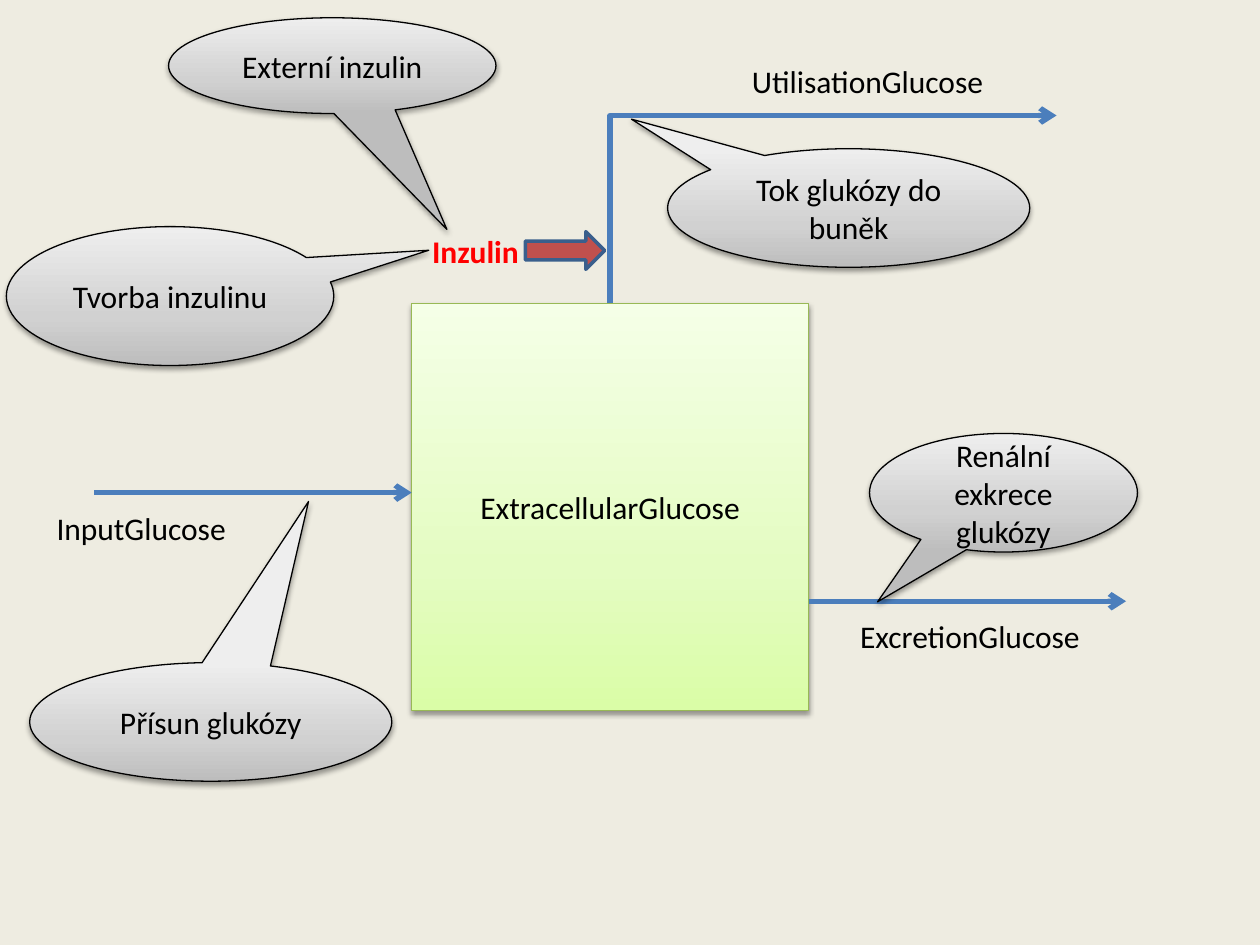
import dataclasses

import lxml.etree
import pptx
import pptx.dml.color
import pptx.enum.shapes
import pptx.enum.text
import pptx.oxml
import pptx.oxml.ns
import pptx.util

Cm = pptx.util.Cm
Pt = pptx.util.Pt
ShapeType = pptx.enum.shapes.MSO_SHAPE
ConnectorType = pptx.enum.shapes.MSO_CONNECTOR
qn = pptx.oxml.ns.qn

COLORS = {
    "background": "EEECE1",
    "text": "000000",
    "insulin": "FF0000",
    "flow": "4B7EBC",
    "pool_line": "98B955",
    "callout_line": "000000",
    "arrow": "C0504D",
    "arrow_line": "3A5F8C",
    "shadow": "000000",
}
POOL_GRADIENT = ("DAFDA7", "E4FCC2", "F5FFE7")
CALLOUT_GRADIENT = ("BDBDBD", "D1D1D1", "EEEEEE")
GRADIENT_STOPS = (0, 35, 100)
FONT = "Calibri"
LABEL_HEIGHT = 1.02


@dataclasses.dataclass
class Callout:
    text: str
    left: float
    top: float
    width: float
    height: float
    tip: tuple[float, float]


@dataclasses.dataclass
class Label:
    text: str
    left: float
    top: float
    width: float
    color: str = "text"
    bold: bool = False


@dataclasses.dataclass
class Flow:
    start: float
    end: float
    height: float


CALLOUTS = [
    Callout("Tvorba inzulinu", 0.13, 4.57, 6.6, 2.8, (0.79, -0.33)),
    Callout("Externí inzulin", 3.4, 0.36, 6.6, 1.93, (0.35, 1.71)),
    Callout("Renální exkrece glukózy", 17.53, 8.74, 5.4, 2.39, (-0.47, 0.92)),
    Callout("Tok glukózy do buněk", 13.46, 3, 7.3, 2.39, (-0.6, -0.75)),
    Callout("Přísun glukózy", 0.6, 13.36, 7.3, 2.39, (0.27, -1.86)),
]
LABELS = [
    Label("InputGlucose", 0.89, 10.13, 4.11),
    Label("ExcretionGlucose", 17.09, 12.32, 5),
    Label("UtilisationGlucose", 14.91, 1.12, 5.23),
    Label("Inzulin", 8.46, 4.55, 2.26, "insulin", True),
]
FLOWS = [Flow(1.9, 8.3, 9.93), Flow(16.3, 22.7, 12.12)]


def rgb(value: str) -> pptx.dml.color.RGBColor:
    return pptx.dml.color.RGBColor.from_string(value)


def add_color(parent, value: str):
    return lxml.etree.SubElement(parent, qn("a:srgbClr"), val=value)


def write_text(frame, text: str, color: str = "text", bold: bool = False) -> None:
    frame.text = text
    font = frame.paragraphs[0].runs[0].font
    font.name = FONT
    font.size = Pt(18)
    font.bold = bold
    font.color.rgb = rgb(COLORS[color])


def add_box(slide, kind, left, top, width, height, line_color, line_width):
    box = slide.shapes.add_shape(kind, Cm(left), Cm(top), Cm(width), Cm(height))
    box.shadow.inherit = False
    box.line.color.rgb = rgb(COLORS[line_color])
    box.line.width = Pt(line_width)
    return box


def shade(box, gradient: tuple[str, ...]) -> None:
    box.fill.gradient()
    properties = box.element.spPr
    stops = properties.find(".//" + qn("a:gsLst"))
    for stop in list(stops):
        stops.remove(stop)
    for position, color in zip(GRADIENT_STOPS, gradient):
        stop = lxml.etree.SubElement(stops, qn("a:gs"), pos=str(position * 1000))
        add_color(stop, color)
    properties.find(".//" + qn("a:lin")).set("ang", "16200000")
    shadow = lxml.etree.SubElement(
        properties.find(qn("a:effectLst")), qn("a:outerShdw"),
        blurRad="40000", dist="20000", dir="5400000", rotWithShape="0")
    color = add_color(shadow, COLORS["shadow"])
    lxml.etree.SubElement(color, qn("a:alpha"), val="38000")


def caption(box, text: str) -> None:
    frame = box.text_frame
    frame.word_wrap = True
    frame.vertical_anchor = pptx.enum.text.MSO_ANCHOR.MIDDLE
    write_text(frame, text)
    frame.paragraphs[0].alignment = pptx.enum.text.PP_ALIGN.CENTER


def add_callout(slide, callout: Callout) -> None:
    box = add_box(slide, ShapeType.OVAL_CALLOUT, callout.left, callout.top,
                  callout.width, callout.height, "callout_line", 0.75)
    box.adjustments[0], box.adjustments[1] = callout.tip
    shade(box, CALLOUT_GRADIENT)
    caption(box, callout.text)


def add_label(slide, label: Label) -> None:
    box = slide.shapes.add_textbox(
        Cm(label.left), Cm(label.top), Cm(label.width), Cm(LABEL_HEIGHT))
    frame = box.text_frame
    frame.word_wrap = False
    frame.auto_size = pptx.enum.text.MSO_AUTO_SIZE.SHAPE_TO_FIT_TEXT
    write_text(frame, label.text, label.color, label.bold)


def add_arrow(slide, kind, x1: float, y1: float, x2: float, y2: float):
    arrow = slide.shapes.add_connector(kind, Cm(x1), Cm(y1), Cm(x2), Cm(y2))
    arrow.line.color.rgb = rgb(COLORS["flow"])
    arrow.line.width = Pt(3)
    properties = arrow.element.spPr
    lxml.etree.SubElement(properties.find(qn("a:ln")), qn("a:tailEnd"), type="arrow")
    lxml.etree.SubElement(properties, qn("a:effectLst"))
    return arrow


def add_corner_arrow(slide, x1: float, y1: float, x2: float, y2: float) -> None:
    middle_x, middle_y = (x1 + x2) / 2, (y1 + y2) / 2
    half_width, half_height = (y1 - y2) / 2, (x2 - x1) / 2
    arrow = add_arrow(slide, ConnectorType.ELBOW,
                      middle_x + half_width, middle_y + half_height,
                      middle_x - half_width, middle_y - half_height)
    properties = arrow.element.spPr
    properties.find(qn("a:xfrm")).set("rot", "5400000")
    properties.find(qn("a:prstGeom")).set("prst", "bentConnector2")


def main() -> None:
    deck = pptx.Presentation()
    deck.slide_width, deck.slide_height = Cm(25.4), Cm(19.05)
    slide = deck.slides.add_slide(deck.slide_layouts[6])
    slide.background.fill.solid()
    slide.background.fill.fore_color.rgb = rgb(COLORS["background"])

    pool = add_box(slide, ShapeType.RECTANGLE, 8.3, 6.12, 8, 8.2, "pool_line", 0.75)
    shade(pool, POOL_GRADIENT)
    caption(pool, "ExtracellularGlucose")

    for flow in FLOWS:
        add_arrow(slide, ConnectorType.STRAIGHT,
                  flow.start, flow.height, flow.end, flow.height)
    add_corner_arrow(slide, 12.3, 6.12, 21.3, 2.33)

    for callout in CALLOUTS:
        add_callout(slide, callout)

    effect = add_box(slide, ShapeType.RIGHT_ARROW, 10.59, 4.67, 1.6, 0.76, "arrow_line", 2)
    effect.fill.solid()
    effect.fill.fore_color.rgb = rgb(COLORS["arrow"])

    for label in LABELS:
        add_label(slide, label)

    deck.save("out.pptx")


if __name__ == "__main__":
    main()
